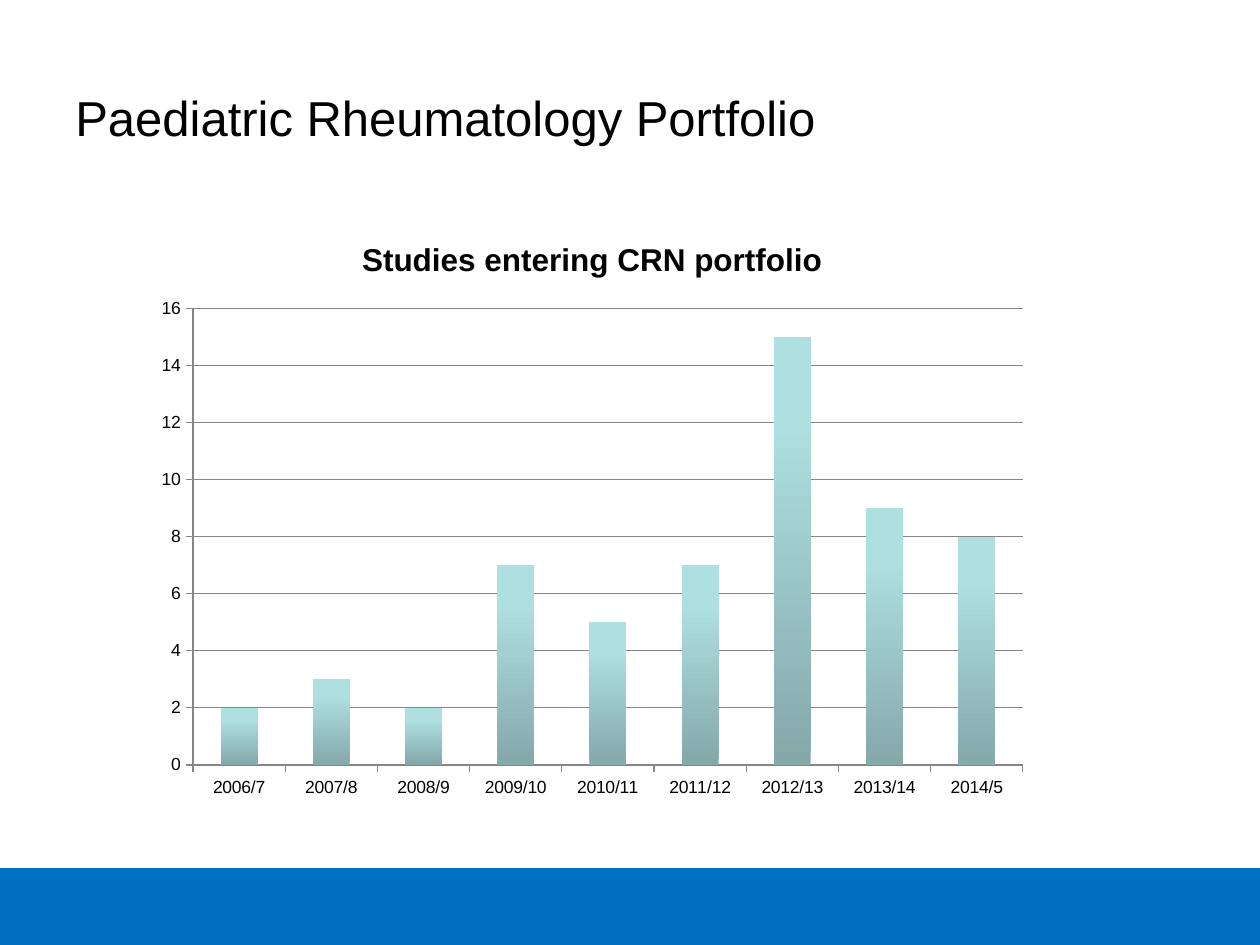
from pptx import Presentation
from pptx import util as u
from pptx.chart.data import CategoryChartData
from pptx.dml.color import RGBColor
from pptx.enum import chart as ch, shapes, text


def rgb(value):
    return RGBColor.from_string(value)


def style(font, size, bold=False):
    font.name = "Arial"
    font.size = u.Pt(size)
    font.bold = bold
    font.color.rgb = rgb("000000")


prs = Presentation()
prs.slide_width = u.Inches(10)
prs.slide_height = u.Inches(7.5)
s = prs.slides.add_slide(prs.slide_layouts[6])

band = s.shapes.add_shape(shapes.MSO_SHAPE.RECTANGLE, u.Inches(0), u.Inches(6.9),
                          u.Inches(10), u.Inches(0.6))
band.shadow.inherit = False
band.fill.solid()
band.fill.fore_color.rgb = rgb("0070C0")
band.line.color.rgb = rgb("0070C0")
band.line.width = u.Pt(2)

sp = s.shapes.add_textbox(u.Inches(0.5), u.Inches(0.3), u.Inches(9), u.Inches(1.25))
tf = sp.text_frame
tf.word_wrap = True
tf.vertical_anchor = text.MSO_ANCHOR.MIDDLE
r = tf.paragraphs[0].add_run()
r.text = "Paediatric Rheumatology Portfolio"
style(r.font, 28)

heading = "Studies entering CRN portfolio"
data = CategoryChartData()
data.categories = ["2006/7", "2007/8", "2008/9", "2009/10", "2010/11",
                   "2011/12", "2012/13", "2013/14", "2014/5"]
data.add_series(heading, [2, 3, 2, 7, 5, 7, 15, 9, 8])
chart = s.shapes.add_chart(ch.XL_CHART_TYPE.COLUMN_CLUSTERED, u.Inches(1.14), u.Inches(1.7),
                           u.Inches(7.12), u.Inches(4.72), data).chart
style(chart.font, 10)
chart.has_legend = False
chart.has_title = True
r = chart.chart_title.text_frame.paragraphs[0].add_run()
r.text = heading
style(r.font, 18, True)

for axis in (chart.category_axis, chart.value_axis):
    axis.major_tick_mark = ch.XL_TICK_MARK.OUTSIDE
    axis.minor_tick_mark = ch.XL_TICK_MARK.NONE
    axis.format.line.color.rgb = rgb("868686")
    axis.format.line.width = u.Pt(0.75)

axis = chart.value_axis
axis.minimum_scale = 0
axis.maximum_scale = 16
axis.major_unit = 2
axis.has_major_gridlines = True
axis.major_gridlines.format.line.color.rgb = rgb("868686")
axis.major_gridlines.format.line.width = u.Pt(0.75)

plot = chart.plots[0]
plot.gap_width = 150
plot.vary_by_categories = False
fill = plot.series[0].format.fill
fill.gradient()
fill.gradient_angle = 90
for stop, position, color in zip(fill.gradient_stops, (0, 0.8), ("85A8A9", "AEDFE1")):
    stop.position = position
    stop.color.rgb = rgb(color)

prs.save("out.pptx")
